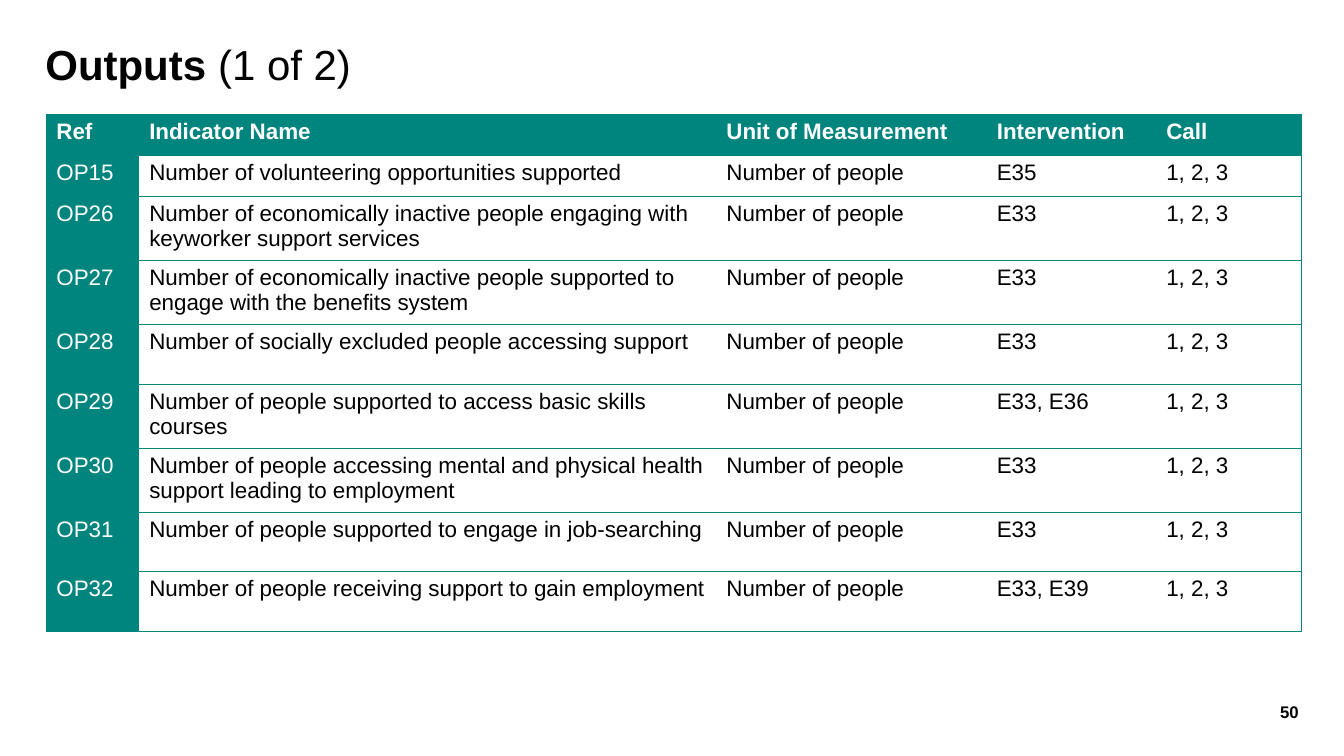
from lxml import etree
from pptx import Presentation
from pptx.dml.color import RGBColor
from pptx.enum.text import MSO_ANCHOR, PP_ALIGN
from pptx.oxml.ns import qn
from pptx.util import Inches, Pt

TOP, MIDDLE = MSO_ANCHOR.TOP, MSO_ANCHOR.MIDDLE
LEFT, RIGHT = PP_ALIGN.LEFT, PP_ALIGN.RIGHT

SLIDE_WIDTH, SLIDE_HEIGHT = Inches(13.33), Inches(7.5)
FONT = "Arial"
TEAL, WHITE, BLACK = "00847E", "FFFFFF", "000000"
BORDER_WIDTH = Pt(0.5)

COLUMN_WEIGHTS = [0.92, 5.72, 2.68, 1.68, 1.44]
ROW_WEIGHTS = [0.41] * 2 + [0.59] * 7

HEADER = ["Ref", "Indicator Name", "Unit of Measurement", "Intervention", "Call"]
UNIT, CALLS = "Number of people", "1, 2, 3"
INDICATORS = [
    ("OP15", "Number of volunteering opportunities supported", "E35"),
    ("OP26", "Number of economically inactive people engaging with keyworker support services", "E33"),
    ("OP27", "Number of economically inactive people supported to engage with the benefits system", "E33"),
    ("OP28", "Number of socially excluded people accessing support", "E33"),
    ("OP29", "Number of people supported to access basic skills courses", "E33, E36"),
    ("OP30", "Number of people accessing mental and physical health support leading to employment", "E33"),
    ("OP31", "Number of people supported to engage in job-searching", "E33"),
    ("OP32", "Number of people receiving support to gain employment", "E33, E39"),
]


def color(value):
    return RGBColor.from_string(value)


def place(left, top, width, height):
    return (
        round(SLIDE_WIDTH * left / 100),
        round(SLIDE_HEIGHT * top / 100),
        round(SLIDE_WIDTH * width / 100),
        round(SLIDE_HEIGHT * height / 100),
    )


def add_span(para, text, size=16, bold=False, ink=BLACK):
    span = para.add_run()
    span.text = text
    span.font.name = FONT
    span.font.size = Pt(size)
    span.font.bold = bold
    span.font.color.rgb = color(ink)


def add_text(page, area, spans, size, align=LEFT, anchor=TOP, line_spacing=1.0):
    box = page.shapes.add_textbox(*place(*area))
    frame = box.text_frame
    frame.word_wrap = True
    frame.vertical_anchor = anchor
    frame.margin_left = frame.margin_right = 0
    frame.margin_top = frame.margin_bottom = 0
    para = frame.paragraphs[0]
    para.alignment = align
    para.line_spacing = line_spacing
    for text, bold in spans:
        add_span(para, text, size=size, bold=bold)


def set_borders(cell, visible_sides):
    properties = cell._tc.get_or_add_tcPr()
    for index, side in enumerate("LRTB"):
        line = etree.Element(qn(f"a:ln{side}"), w=str(BORDER_WIDTH))
        if side in visible_sides:
            fill = etree.SubElement(line, qn("a:solidFill"))
            etree.SubElement(fill, qn("a:srgbClr"), val=TEAL)
        else:
            etree.SubElement(line, qn("a:noFill"))
        properties.insert(index, line)


def fill_cell(cell, text, is_header, is_first, is_last):
    shaded = is_header or is_first
    if shaded:
        cell.fill.solid()
        cell.fill.fore_color.rgb = color(TEAL)
    else:
        cell.fill.background()
    add_span(cell.text_frame.paragraphs[0], text, bold=is_header, ink=WHITE if shaded else BLACK)
    set_borders(cell, "TB" + "L" * is_first + "R" * is_last)


def share_out(tracks, weights, total, attribute):
    for track, weight in zip(tracks, weights):
        setattr(track, attribute, round(total * weight / sum(weights)))


def add_indicator_table(page, area):
    rows = [HEADER] + [[ref, name, UNIT, code, CALLS] for ref, name, code in INDICATORS]
    left, top, width, height = place(*area)
    table = page.shapes.add_table(len(rows), len(HEADER), left, top, width, height).table
    table.horz_banding = False
    share_out(table.columns, COLUMN_WEIGHTS, width, "width")
    share_out(table.rows, ROW_WEIGHTS, height, "height")
    for row_index, row in enumerate(rows):
        for column_index, text in enumerate(row):
            fill_cell(
                table.cell(row_index, column_index),
                text,
                is_header=row_index == 0,
                is_first=column_index == 0,
                is_last=column_index == len(HEADER) - 1,
            )


def main():
    deck = Presentation()
    deck.slide_width, deck.slide_height = SLIDE_WIDTH, SLIDE_HEIGHT
    page = deck.slides.add_slide(deck.slide_layouts[6])
    add_text(page, (91.3, 91.47, 5.33, 5.33), [("50", True)], 12, align=RIGHT, anchor=MIDDLE)
    add_text(page, (3.38, 5.87, 93.4, 8.4), [("Outputs ", True), ("(1 of 2)", False)], 30, line_spacing=0.9)
    add_indicator_table(page, (3.45, 15.07, 93.4, 66.2))
    deck.save("out.pptx")


if __name__ == "__main__":
    main()
